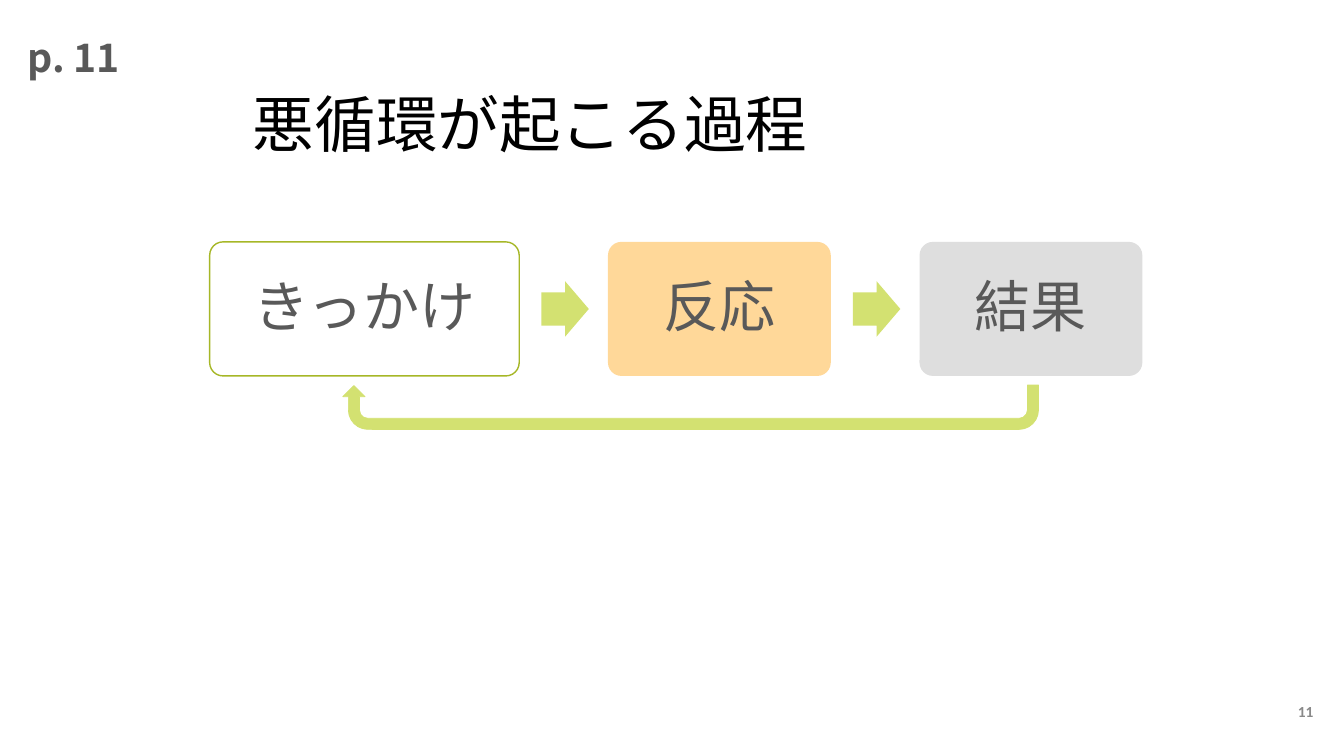
import pptx
import pptx.util
import pptx.dml.color
import pptx.enum.shapes
import pptx.enum.text
import pptx.oxml.ns
import lxml.etree

Inches = pptx.util.Inches
Pt = pptx.util.Pt
KIND = pptx.enum.shapes.MSO_SHAPE
ALIGN = pptx.enum.text.PP_ALIGN
ANCHOR = pptx.enum.text.MSO_ANCHOR
SANS = "Noto Sans CJK JP"
GREEN = "D3E171"
GRAY = "595959"


def color(code):
    """Turn a hex string into a colour."""
    return pptx.dml.color.RGBColor.from_string(code)


def write(frame, text, size, shade, font=SANS, bold=False, align=ALIGN.CENTER,
          anchor=ANCHOR.MIDDLE, space=1.0):
    """Put one run of styled text into a frame."""
    frame.word_wrap = True
    frame.vertical_anchor = anchor
    para = frame.paragraphs[0]
    para.alignment = align
    para.line_spacing = space
    run = para.add_run()
    run.text = text
    run.font.size = Pt(size)
    run.font.bold = bold
    run.font.name = font
    run.font.color.rgb = color(shade)
    east = lxml.etree.Element(pptx.oxml.ns.qn("a:ea"), typeface=font)
    run.font._element.find(pptx.oxml.ns.qn("a:latin")).addnext(east)


def label(slide, area, *args, **style):
    """Add a text box."""
    box = slide.shapes.add_textbox(*map(Inches, area))
    write(box.text_frame, *args, **style)


def block(slide, kind, area, fill, adjust, line=None, width=1):
    """Add a filled preset shape."""
    shape = slide.shapes.add_shape(kind, *map(Inches, area))
    shape.shadow.inherit = False
    shape.fill.solid()
    shape.fill.fore_color.rgb = color(fill)
    for i, value in enumerate(adjust):
        shape.adjustments[i] = value
    if line:
        shape.line.color.rgb = color(line)
        shape.line.width = Pt(width)
    else:
        shape.line.fill.background()
    return shape


def step(slide, left, width, text, fill, line):
    """Add one labelled step of the cycle."""
    shape = block(slide, KIND.ROUNDED_RECTANGLE, (left, 2.4, width, 1.33), fill, [0.1], line)
    frame = shape.text_frame
    frame.margin_left = frame.margin_right = Inches(0.17)
    frame.margin_top = frame.margin_bottom = Inches(0.17)
    write(frame, text, 40, GRAY, space=0.9)


def main():
    """Build the slide and save it."""
    deck = pptx.Presentation()
    deck.slide_width, deck.slide_height = Inches(13.33), Inches(7.5)
    slide = deck.slides.add_slide(deck.slide_layouts[6])
    label(slide, (2.41, 0.33, 10.25, 1.31), "悪循環が起こる過程", 44, "000000",
          align=ALIGN.LEFT, anchor=ANCHOR.BOTTOM, space=0.9)
    label(slide, (12.66, 6.87, 0.58, 0.38), "11", 11, "898989", font="Calibri", bold=True)
    label(slide, (0, 0.14, 1.46, 0.85), "p. 11", 28, GRAY, bold=True)

    steps = [
        (3.07, "きっかけ", "FFFFFF", "A6B727"),
        (2.21, "反応", "FFD899", None),
        (2.21, "結果", "DEDEDE", None),
    ]
    left, gap = 2.08, 0.88
    for i, (width, text, fill, line) in enumerate(steps):
        if i:
            block(slide, KIND.RIGHT_ARROW, (left - 0.66, 2.79, 0.47, 0.55), GREEN, [0.6, 0.5])
        step(slide, left, width, text, fill, line)
        left += width + gap

    back = block(slide, KIND.U_TURN_ARROW, (3.4, 3.82, 6.9, 0.44), GREEN,
                 [0.25, 0.25, 0.25, 0.438, 0.988], GREEN, 0.5)
    back.rotation = 180
    deck.save("out.pptx")


if __name__ == "__main__":
    main()
